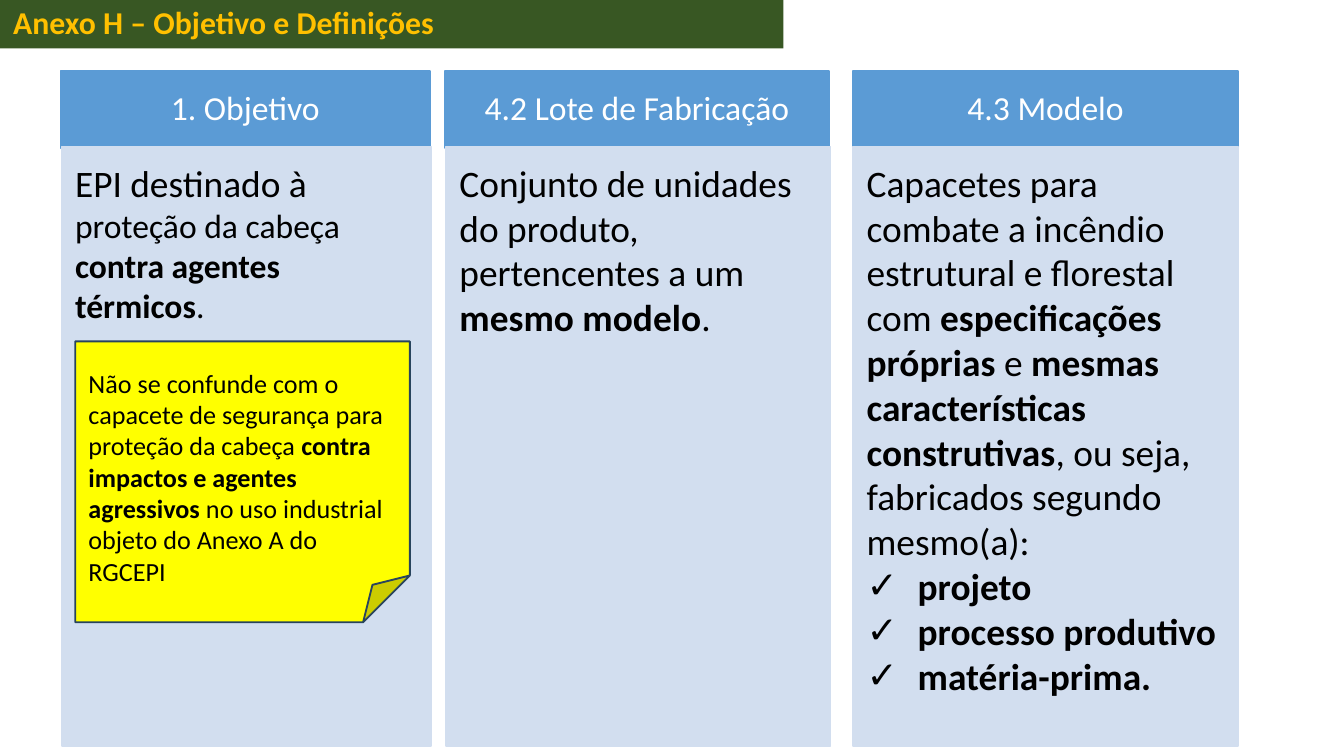
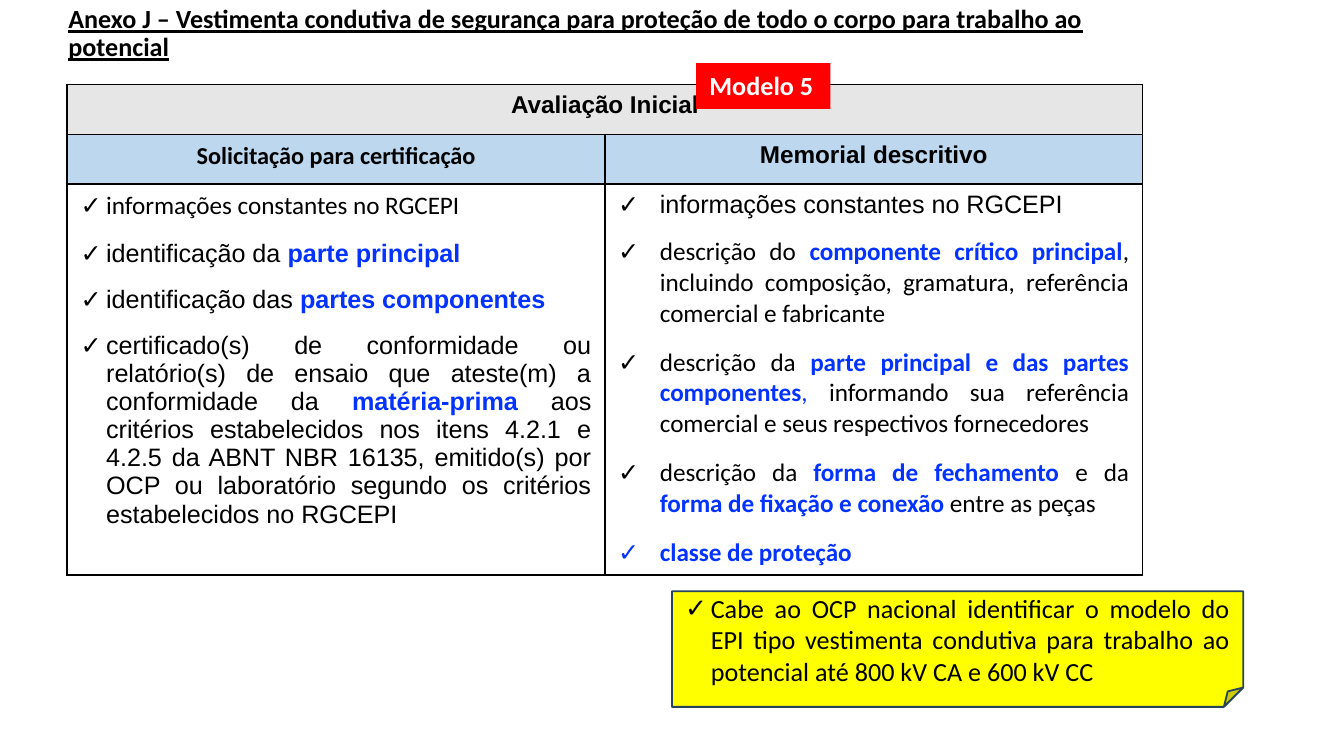
"""Builds two slides on the certification of helmets and conductive clothing."""
import pptx
import pptx.util
import pptx.dml.color
import pptx.enum.shapes
import pptx.enum.text
import pptx.oxml
import pptx.oxml.ns

Inches = pptx.util.Inches
Pt = pptx.util.Pt
RGB = pptx.dml.color.RGBColor.from_string
SHAPE = pptx.enum.shapes.MSO_SHAPE
ALIGN = pptx.enum.text.PP_ALIGN
ANCHOR = pptx.enum.text.MSO_ANCHOR
NAMESPACE = pptx.oxml.ns.nsdecls("a")

COLORS = {
    "black": "000000", "white": "FFFFFF", "green": "385723", "gold": "FFC000",
    "blue": "5B9BD5", "pale": "D2DEEF", "yellow": "FFFF00", "navy": "28445D",
    "gray": "E7E6E6", "sky": "BDD7EE", "accent": "0432FF", "red": "FF0000",
}


def add_box(page, shape, area, fill, line=None, anchor=ANCHOR.MIDDLE, insets=(0.1, 0.05, 0.1, 0.05)):
    box = page.shapes.add_shape(shape, *[Inches(value) for value in area])
    box.shadow.inherit = False
    box.fill.solid()
    box.fill.fore_color.rgb = RGB(COLORS[fill])
    if line:
        box.line.color.rgb = RGB(COLORS[line])
        box.line.width = Pt(1)
    else:
        box.line.fill.background()
    frame = box.text_frame
    frame.word_wrap = True
    frame.vertical_anchor = anchor
    frame.margin_left, frame.margin_top, frame.margin_right, frame.margin_bottom = [
        Inches(value) for value in insets]
    return box


def write(frame, text, size, font="Calibri", color="black", bold=False, align=ALIGN.LEFT,
          indent=0, bullet="black", accent=None, gap=0, spacing=None):
    """Adds a paragraph in which *asterisks* mark the bold spans."""
    para = frame.paragraphs[0]
    if para.runs:
        para = frame.add_paragraph()
        para.space_before = Pt(gap)
    para.alignment = align
    if spacing:
        para.line_spacing = spacing
    if indent:
        properties = para._p.get_or_add_pPr()
        properties.set("marL", str(Inches(indent)))
        properties.set("indent", str(-Inches(indent)))
        for element in (f'<a:buClr {NAMESPACE}><a:srgbClr val="{COLORS[bullet]}"/></a:buClr>',
                        f'<a:buFont {NAMESPACE} typeface="Arial"/>',
                        f'<a:buChar {NAMESPACE} char="✓"/>'):
            properties.append(pptx.oxml.parse_xml(element))
    para.font.name = font
    para.font.size = Pt(size)
    para.font.color.rgb = RGB(COLORS[color])
    para.font.bold = bold
    for number, piece in enumerate(text.split("*")):
        if piece:
            span = para.add_run()
            span.text = piece
            if number % 2:
                span.font.bold = True
                if accent:
                    span.font.color.rgb = RGB(COLORS[accent])
    return para


deck = pptx.Presentation()
deck.slide_width = Inches(10)
deck.slide_height = Inches(10 * 9 / 16)
blank = deck.slide_layouts[6]

page = deck.slides.add_slide(blank)
cards = [
    (0.45, 0.46, 2.75, "1. Objetivo", 18,
     "EPI destinado à* *proteção da cabeça *contra agentes térmicos*.", []),
    (3.31, 3.32, 2.86, "4.2 Lote de Fabricação", 20,
     "Conjunto de unidades do produto, pertencentes a um *mesmo modelo*.", []),
    (6.35, 6.35, 2.86, "4.3 Modelo", 20,
     "Capacetes para combate a incêndio estrutural e florestal com *especificações próprias *e "
     "*mesmas características construtivas*, ou seja, fabricados segundo mesmo(a):",
     ["projeto", "processo produtivo", "matéria-prima."]),
]
for header_left, body_left, width, heading, size, text, checks in cards:
    header = add_box(page, SHAPE.RECTANGLE, (header_left, 0.53, width, 0.57), "blue", "blue",
                     insets=(0.14, 0.08, 0.14, 0.08))
    write(header.text_frame, heading, 18, color="white", align=ALIGN.CENTER, spacing=0.9)
    body = add_box(page, SHAPE.RECTANGLE, (body_left, 1.09, width, 4.46), "pale", "pale",
                   ANCHOR.TOP, (0.1, 0.1, 0.14, 0.16))
    opening = write(body.text_frame, text, size)
    opening.runs[0].font.size = Pt(20)
    for check in checks:
        write(body.text_frame, check, 20, bold=True, indent=0.38)

band = add_box(page, SHAPE.RECTANGLE, (0, 0, 5.83, 0.36), "green")
write(band.text_frame, "Anexo H – Objetivo e Definições", 17, color="gold", bold=True, spacing=0.9)
note = add_box(page, SHAPE.FOLDED_CORNER, (0.56, 2.54, 2.49, 2.09), "yellow", "navy",
               ANCHOR.TOP, (0.1, 0.19, 0.1, 0))
write(note.text_frame, "Não se confunde com o capacete de segurança para proteção da cabeça "
      "*contra impactos e agentes agressivos* no uso industrial objeto do Anexo A do RGCEPI", 14)

page = deck.slides.add_slide(blank)
table = page.shapes.add_table(3, 2, Inches(0.5), Inches(0.63), Inches(8), Inches(3.65)).table
for column in table.columns:
    column.width = Inches(4)
for row, height in zip(table.rows, (0.37, 0.37, 2.91)):
    row.height = Inches(height)
for row, fill in zip(table.rows, ("gray", "sky", "white")):
    for cell in row.cells:
        cell.fill.solid()
        cell.fill.fore_color.rgb = RGB(COLORS[fill])
        properties = cell._tc.get_or_add_tcPr()
        for number, side in enumerate(("lnL", "lnR", "lnT", "lnB")):
            properties.insert(number, pptx.oxml.parse_xml(
                f'<a:{side} {NAMESPACE} w="12700"><a:solidFill>'
                f'<a:srgbClr val="{COLORS["black"]}"/></a:solidFill></a:{side}>'))
table.cell(0, 0).merge(table.cell(0, 1))
headings = [
    (0, 0, "Avaliação Inicial", "Arial"),
    (1, 0, "Solicitação para certificação", "Calibri"),
    (1, 1, "Memorial descritivo", "Arial"),
]
for row, column, text, font in headings:
    write(table.cell(row, column).text_frame, text, 13, font, bold=True, align=ALIGN.CENTER)

requests = [
    ("informações constantes no RGCEPI", "Calibri", ALIGN.LEFT),
    ("identificação da *parte principal*", "Arial", ALIGN.LEFT),
    ("identificação das *partes componentes*", "Arial", ALIGN.LEFT),
    ("certificado(s) de conformidade ou relatório(s) de ensaio que ateste(m) a conformidade da "
     "*matéria-prima* aos critérios estabelecidos nos itens 4.2.1 e 4.2.5 da ABNT NBR 16135, "
     "emitido(s) por OCP ou laboratório segundo os critérios estabelecidos no RGCEPI",
     "Arial", ALIGN.JUSTIFY),
]
for text, font, align in requests:
    write(table.cell(2, 0).text_frame, text, 13.5, font, align=align, indent=0.19,
          accent="accent", gap=9.75)

descriptions = [
    ("informações constantes no RGCEPI", "Arial", "black"),
    ("descrição do *componente crítico principal*, incluindo composição, gramatura, "
     "referência comercial e fabricante", "Calibri", "black"),
    ("descrição da *parte principal e das partes componentes**,* informando sua referência "
     "comercial e seus respectivos fornecedores", "Calibri", "black"),
    ("descrição da *forma de fechamento *e da *forma de fixação e conexão *entre as peças",
     "Calibri", "black"),
    ("*classe de proteção*", "Calibri", "accent"),
]
details = table.cell(2, 1).text_frame
for text, font, bullet in descriptions:
    write(details, text, 13.5, font, align=ALIGN.JUSTIFY, indent=0.31,
          bullet=bullet, accent="accent", gap=9.75)
comma = details.paragraphs[2].runs[2]
comma.font.bold = False

title = page.shapes.add_textbox(Inches(0.41), Inches(-0.1), Inches(8.43), Inches(0.71)).text_frame
title.word_wrap = True
title.vertical_anchor = ANCHOR.MIDDLE
heading = write(title, "Anexo J – Vestimenta condutiva de segurança para proteção de todo o corpo "
                "para trabalho ao potencial", 14, bold=True, spacing=0.9)
heading.font.underline = True
note = add_box(page, SHAPE.FOLDED_CORNER, (5, 4.4, 4.25, 0.86), "yellow", "navy")
write(note.text_frame, "Cabe ao OCP nacional identificar o modelo do EPI tipo vestimenta condutiva "
      "para trabalho ao potencial até 800 kV CA e 600 kV CC", 14, align=ALIGN.JUSTIFY, indent=0.19)
badge = add_box(page, SHAPE.RECTANGLE, (5.18, 0.47, 1, 0.34), "red", anchor=ANCHOR.TOP)
write(badge.text_frame, "Modelo 5", 14, color="white", bold=True)

deck.save("out.pptx")
